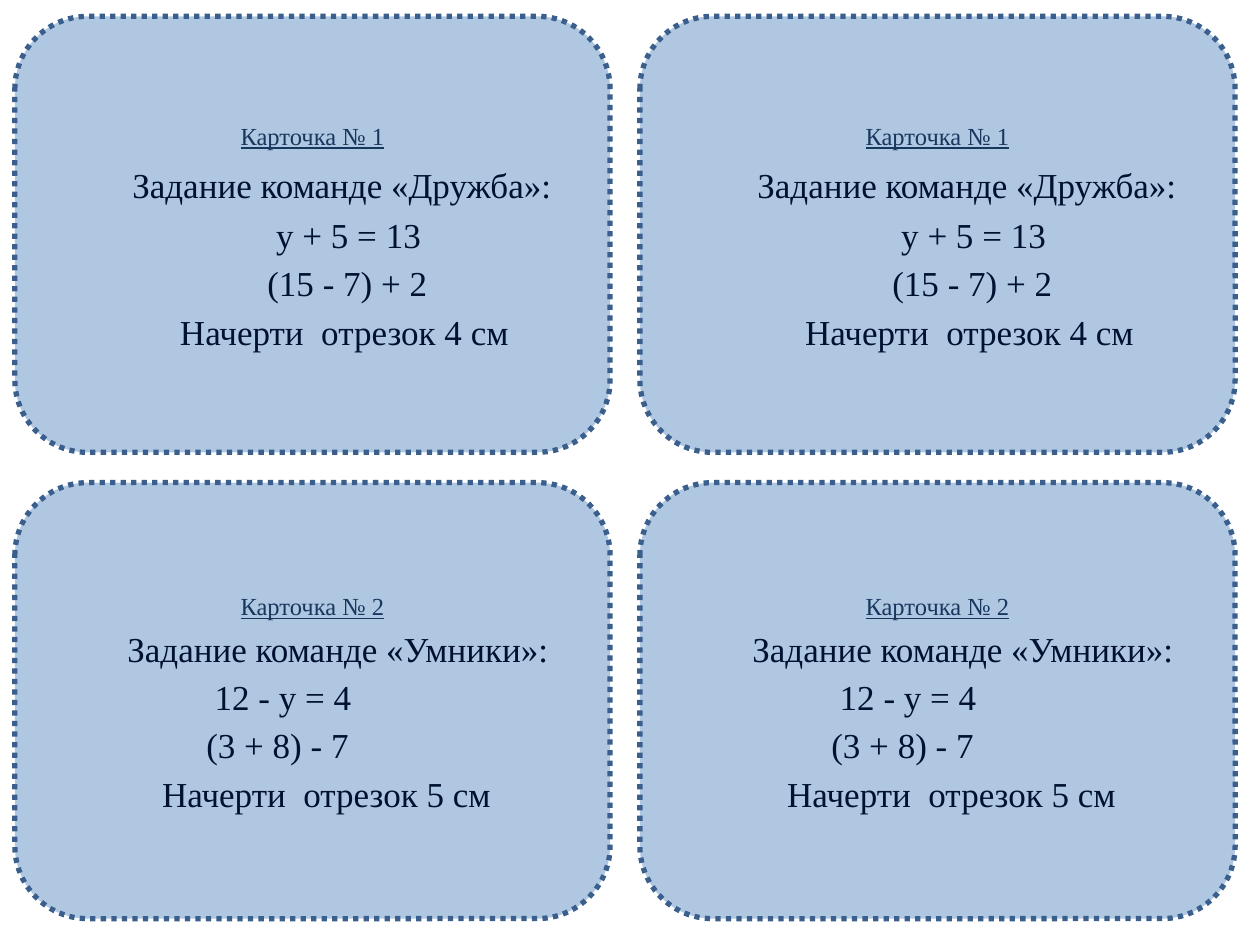
from pptx import Presentation
from pptx.dml.color import RGBColor
from pptx.enum.dml import MSO_LINE
from pptx.enum.shapes import MSO_SHAPE
from pptx.enum.text import MSO_ANCHOR, PP_ALIGN
from pptx.util import Cm, Pt

COLORS = {"card": "B0C7E2", "border": "3A5F8C", "label": "17375E", "task": "001132"}
FONT = "Times New Roman"

CARD_WIDTH, CARD_HEIGHT = 12, 8.79
LEFT, TOP = 0.3, 0.33
COLUMN_STEP, ROW_STEP = 12.6, 9.4
COLUMNS = 2

# Each task line is paired with its indent in centimetres.
CARDS = [
    {
        "label": "Карточка № 1",
        "tasks": [
            ("Задание команде «Дружба»:", 1.69),
            ("y + 5 = 13", 4.59),
            ("(15 - 7) + 2", 4.41),
            ("Начерти  отрезок 4 см", 2.65),
        ],
        "heading_gap": (4, 1),
    },
    {
        "label": "Карточка № 2",
        "tasks": [
            ("Задание команде «Умники»:", 1.59),
            ("12 - y = 4", 3.35),
            ("(3 + 8) - 7", 3.18),
            ("Начерти  отрезок 5 см", 2.29),
        ],
        "heading_gap": (0, 0),
    },
]


def color(name):
    return RGBColor.from_string(COLORS[name])


def write(para, text, size=20, ink="task", underline=False,
          align=PP_ALIGN.LEFT, indent=0, gap=(0, 0)):
    para.alignment = align
    para.line_spacing = 1.15
    para.space_before, para.space_after = Pt(gap[0]), Pt(gap[1])
    properties = para._p.get_or_add_pPr()
    properties.set("marL", str(Cm(indent)))
    properties.set("indent", "0")
    span = para.add_run()
    span.text = text
    span.font.name = FONT
    span.font.size = Pt(size)
    span.font.underline = underline
    span.font.color.rgb = color(ink)


def add_card(page, card, left, top, width, height):
    box = page.shapes.add_shape(
        MSO_SHAPE.ROUNDED_RECTANGLE, Cm(left), Cm(top), Cm(width), Cm(height))
    box.shadow.inherit = False
    box.fill.solid()
    box.fill.fore_color.rgb = color("card")
    box.line.color.rgb = color("border")
    box.line.width = Pt(3)
    box.line.dash_style = MSO_LINE.ROUND_DOT

    frame = box.text_frame
    frame.word_wrap = True
    frame.vertical_anchor = MSO_ANCHOR.MIDDLE
    write(frame.paragraphs[0], card["label"], size=14, ink="label",
          underline=True, align=PP_ALIGN.CENTER)
    for number, (text, indent) in enumerate(card["tasks"]):
        gap = card["heading_gap"] if number == 0 else (0, 0)
        write(frame.add_paragraph(), text, indent=indent, gap=gap)


def main():
    deck = Presentation()
    deck.slide_width, deck.slide_height = Cm(25.4), Cm(19.05)
    page = deck.slides.add_slide(deck.slide_layouts[6])
    for row, card in enumerate(CARDS):
        for column in range(COLUMNS):
            add_card(page, card, LEFT + column * COLUMN_STEP, TOP + row * ROW_STEP,
                     CARD_WIDTH, CARD_HEIGHT)
    deck.save("out.pptx")


if __name__ == "__main__":
    main()
